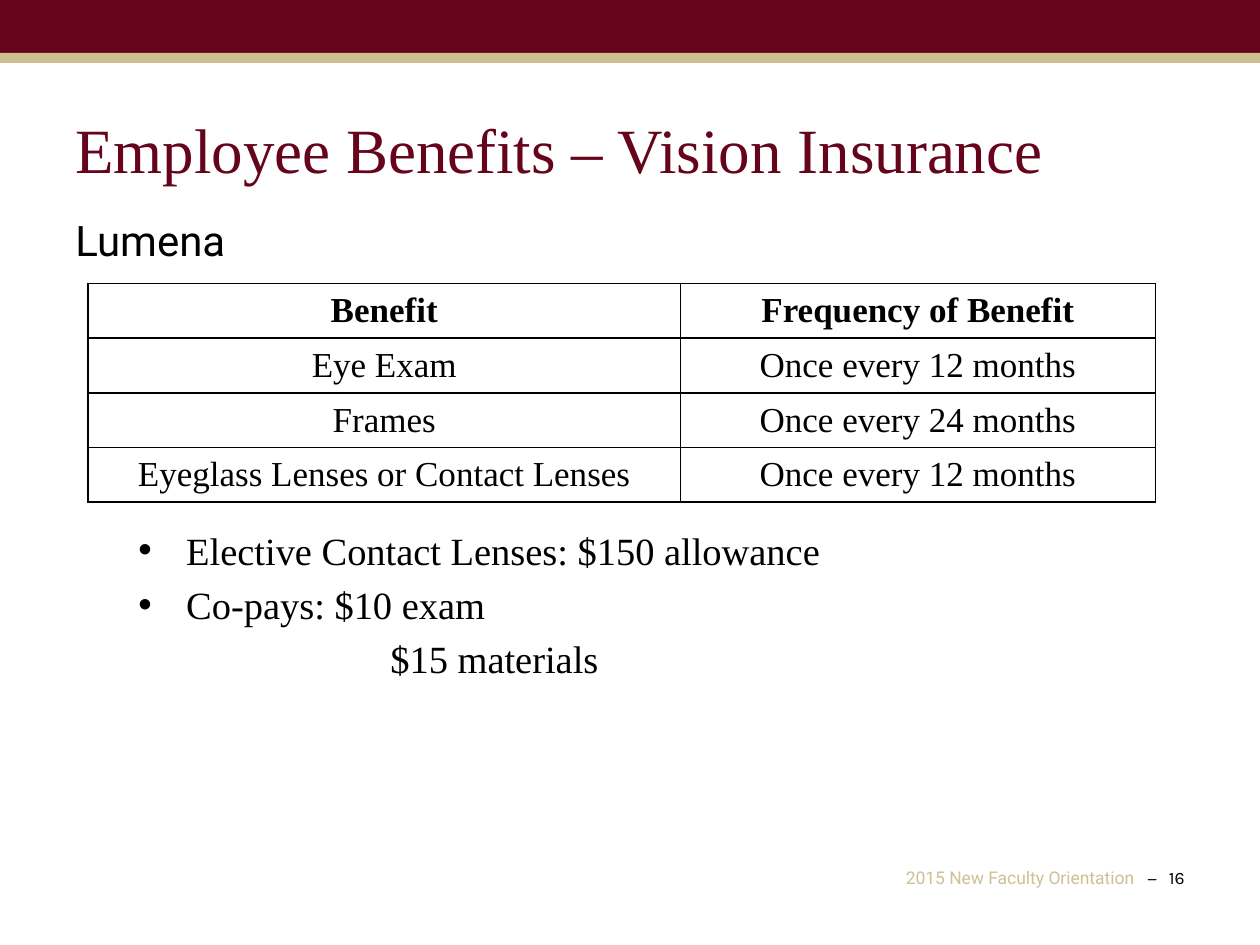
from lxml import etree
from pptx import Presentation, util as u
from pptx.dml.color import RGBColor
from pptx.enum import shapes, text
from pptx.oxml import ns

GARNET, GOLD, BLACK = "65041A", "CDC093", "000000"
SERIF, SANS, NUMERAL = "Times New Roman", "Roboto", "Karla"


def colour(value):
    return RGBColor.from_string(value)


def add_xml(parent, tag, **attributes):
    return etree.SubElement(parent, ns.qn(tag), attributes)


class BenefitSlide:
    def __init__(self, slide):
        self.slide = slide

    def band(self, top, height, fill):
        band = self.slide.shapes.add_shape(
            shapes.MSO_SHAPE.RECTANGLE, 0, u.Inches(top), u.Inches(10), u.Inches(height))
        band.shadow.inherit = False
        band.fill.solid()
        band.fill.fore_color.rgb = colour(fill)
        band.line.fill.background()

    def text_box(self, left, top, width, height):
        frame = self.slide.shapes.add_textbox(
            *(u.Inches(length) for length in (left, top, width, height))).text_frame
        frame.word_wrap = True
        return frame

    def paragraph(self, frame, first=False, before=0, margin=0, hanging=0, bullet=None):
        paragraph = frame.paragraphs[0] if first else frame.add_paragraph()
        if before:
            paragraph.space_before = u.Pt(before)
        properties = paragraph._p.get_or_add_pPr()
        properties.set("marL", str(u.Inches(margin)))
        properties.set("indent", str(-u.Inches(hanging)))
        if bullet:
            add_xml(properties, "a:buFont", typeface="Arial")
            add_xml(properties, "a:buChar", char=bullet)
        return paragraph

    def run(self, paragraph, words, size, font=SERIF, fill=BLACK, bold=False):
        run = paragraph.add_run()
        run.text = words
        run.font.size = u.Pt(size)
        run.font.name = font
        run.font.bold = bold
        run.font.color.rgb = colour(fill)

    def footer_part(self, words, left, right, font, fill):
        frame = self.text_box(left, 6.83, right - left, 0.27)
        part = self.paragraph(frame, first=True)
        part.alignment = text.PP_ALIGN.RIGHT
        self.run(part, words, 10, font, fill)

    def borders(self, cell):
        properties = cell._tc.get_or_add_tcPr()
        for position, side in enumerate(("a:lnL", "a:lnR", "a:lnT", "a:lnB")):
            line = etree.Element(ns.qn(side), w=str(u.Pt(1)))
            add_xml(add_xml(line, "a:solidFill"), "a:srgbClr", val=BLACK)
            properties.insert(position, line)

    def table(self, rows, left, top, widths, height):
        table = self.slide.shapes.add_table(
            len(rows), len(widths), u.Inches(left), u.Inches(top),
            u.Inches(sum(widths)), u.Inches(height)).table
        table.first_row = table.horz_banding = False
        for column, width in zip(table.columns, widths):
            column.width = u.Inches(width)
        for r, row in enumerate(rows):
            for c, words in enumerate(row):
                cell = table.cell(r, c)
                cell.fill.background()
                cell.vertical_anchor = text.MSO_ANCHOR.MIDDLE
                self.borders(cell)
                paragraph = cell.text_frame.paragraphs[0]
                paragraph.alignment = text.PP_ALIGN.CENTER
                self.run(paragraph, words, 20, bold=r == 0)


def main():
    deck = Presentation()
    deck.slide_width, deck.slide_height = u.Inches(10), u.Inches(7.5)
    page = BenefitSlide(deck.slides.add_slide(deck.slide_layouts[6]))

    # Header bands
    page.band(0, 0.46, GARNET)
    page.band(0.42, 0.08, GOLD)

    # Footer with page number
    page.footer_part("2015 New Faculty Orientation", 6.67, 9.1, SANS, GOLD)
    page.footer_part("−", 8.95, 9.28, NUMERAL, BLACK)
    page.footer_part("16", 9.1, 9.5, NUMERAL, BLACK)

    # Title and insurer
    heading = page.text_box(0.5, 0.83, 9, 1.35)
    title = page.paragraph(heading, first=True)
    page.run(title, "Employee Benefits ‒ Vision Insurance", 36, fill=GARNET)
    insurer = page.paragraph(heading, before=16)
    page.run(insurer, "Lumena", 24, SANS)

    # Benefit frequencies
    page.table([
        ("Benefit", "Frequency of Benefit"),
        ("Eye Exam", "Once every 12 months"),
        ("Frames", "Once every 24 months"),
        ("Eyeglass Lenses or Contact Lenses", "Once every 12 months"),
    ], 0.7, 2.25, (4.7, 3.77), 1.73)

    # Allowance and co-pays
    costs = page.text_box(0.5, 4.13, 9, 2.2)
    bulleted = {"margin": 0.88, "hanging": 0.38, "bullet": "•"}
    allowance = page.paragraph(costs, first=True, **bulleted)
    page.run(allowance, "Elective Contact Lenses: $150 allowance", 22)
    exam = page.paragraph(costs, before=4.5, **bulleted)
    page.run(exam, "Co-pays: $10 exam", 22)
    materials = page.paragraph(costs, before=4.5, margin=2.5)
    page.run(materials, "$15 materials", 22)

    deck.save("out.pptx")


if __name__ == "__main__":
    main()
